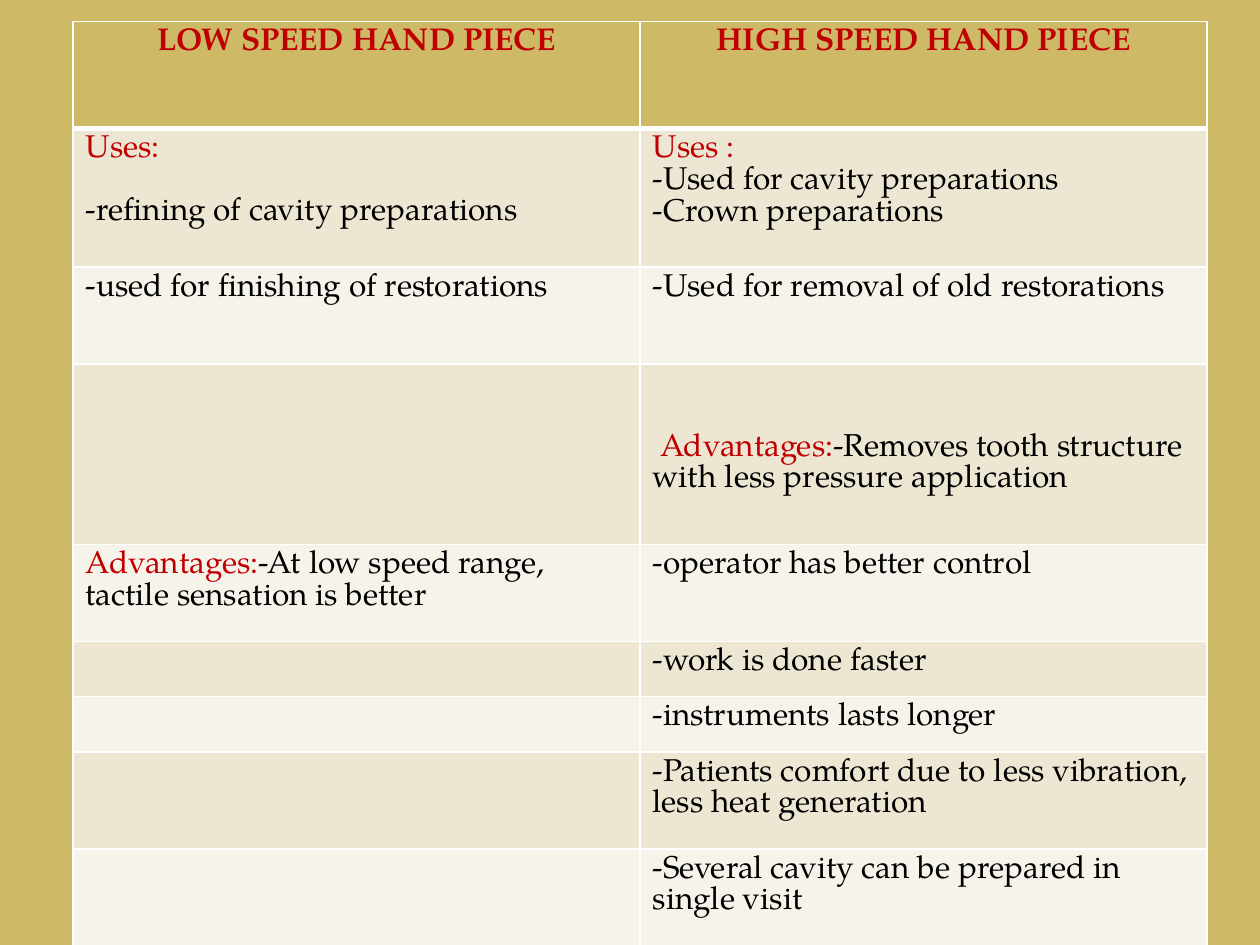
from lxml.etree import SubElement
from pptx import Presentation
from pptx.dml.color import RGBColor
from pptx.enum.text import PP_ALIGN
from pptx.oxml.ns import qn
from pptx.util import Inches, Pt

FONT = "TeX Gyre Pagella"
GOLD, SAND, CREAM = "CEB966", "EDE6D3", "F6F3EA"
RED, BLACK, WHITE = "C00000", "000000", "FFFFFF"
LABELS = ("Uses:", "Uses :", " Advantages:", "Advantages:")
LINE_GAP = 0.25  # height of one text line, in inches

HEADINGS = ("LOW SPEED HAND PIECE", "HIGH SPEED HAND PIECE")
# Row height, then the paragraphs of the low speed and high speed cells
ROWS = [
    (1.1, ["Uses:", "-refining of cavity preparations"],
     ["Uses :", "-Used for cavity preparations", "-Crown preparations"]),
    (0.77, ["-used for finishing of restorations"],
     ["-Used for removal of old restorations"]),
    (1.43, [],
     [" Advantages:-Removes tooth structure with less pressure application"]),
    (0.77, ["Advantages:-At low speed range, tactile sensation is better"],
     ["-operator has better control"]),
    (0.44, [], ["-work is done faster"]),
    (0.44, [], ["-instruments lasts longer"]),
    (0.77, [],
     ["-Patients comfort due to less vibration, less heat generation"]),
    (0.77, [], ["-Several cavity can be prepared in single visit"]),
]


def color(hex_value):
    return RGBColor.from_string(hex_value)


def add_span(para, text, hex_value, bold=False):
    span = para.add_run()
    span.text = text
    span.font.name = FONT
    span.font.size = Pt(18)
    span.font.bold = bold
    span.font.color.rgb = color(hex_value)


def write_paragraph(para, text):
    """Write a leading label in red and the rest in black."""
    label = next((item for item in LABELS if text.startswith(item)), "")
    for part, hex_value in ((label, RED), (text[len(label):], BLACK)):
        if part:
            add_span(para, part, hex_value)


def style_cell(cell, fill, bottom=1, top=1):
    """Draw white borders around a cell and fill it."""
    properties = cell._tc.get_or_add_tcPr()
    for side, width in (("L", 1), ("R", 1), ("T", top), ("B", bottom)):
        line = SubElement(properties, qn(f"a:ln{side}"), w=str(Pt(width)))
        solid = SubElement(line, qn("a:solidFill"))
        SubElement(solid, qn("a:srgbClr"), val=WHITE)
    cell.fill.solid()
    cell.fill.fore_color.rgb = color(fill)


def fill_cell(cell, lines):
    frame = cell.text_frame
    for index, text in enumerate(lines):
        para = frame.paragraphs[0] if index == 0 else frame.add_paragraph()
        write_paragraph(para, text)


def add_comparison(page):
    table = page.shapes.add_table(
        len(ROWS) + 1, 2, Inches(0.58), Inches(0.17), Inches(9), Inches(7.33)
    ).table
    for column in table.columns:
        column.width = Inches(4.5)

    # Heading row
    table.rows[0].height = Inches(0.85)
    for column, heading in enumerate(HEADINGS):
        cell = table.cell(0, column)
        style_cell(cell, GOLD, bottom=3)
        para = cell.text_frame.paragraphs[0]
        para.alignment = PP_ALIGN.CENTER
        add_span(para, heading, RED, bold=True)

    # Body rows in alternating shades
    for row, (height, *texts) in enumerate(ROWS, start=1):
        table.rows[row].height = Inches(height)
        for column, lines in enumerate(texts):
            cell = table.cell(row, column)
            style_cell(cell, SAND if row % 2 else CREAM, top=3 if row == 1 else 1)
            fill_cell(cell, lines)

    # Extra room above the first use and the high speed advantages
    table.cell(1, 0).text_frame.paragraphs[1].space_before = Inches(LINE_GAP)
    table.cell(3, 1).margin_top = Inches(0.05 + 2 * LINE_GAP)


def main():
    deck = Presentation()
    deck.slide_width, deck.slide_height = Inches(10), Inches(7.5)
    page = deck.slides.add_slide(deck.slide_layouts[6])
    page.background.fill.solid()
    page.background.fill.fore_color.rgb = color(GOLD)
    add_comparison(page)
    deck.save("out.pptx")


if __name__ == "__main__":
    main()
